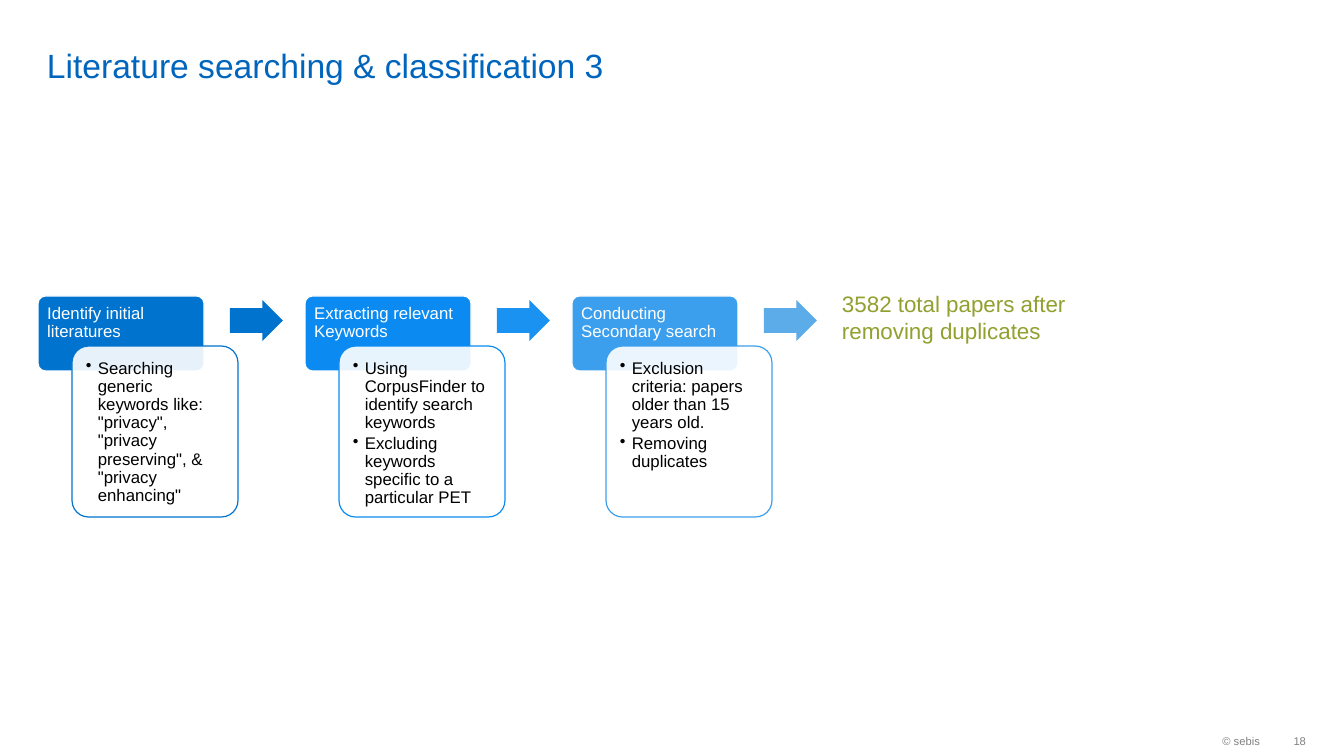
from dataclasses import dataclass

from lxml import etree
from pptx import Presentation
from pptx import util as u
from pptx.dml.color import RGBColor
from pptx.enum import shapes, text
from pptx.oxml import ns


@dataclass(frozen=True)
class Theme:
    font: str = "Arial"
    title: str = "0065BD"
    result: str = "91A02F"
    footer: str = "808080"
    white: str = "FFFFFF"
    black: str = "000000"
    title_size: int = 24
    result_size: int = 16
    body_size: int = 12
    footer_size: int = 8
    line_width: float = 0.85


THEME = Theme()
PX_PER_INCH = 100.8
SLIDE_SIZE = (1344, 756)

# Heading, bullets, box colour, arrow colour
STEPS = [
    ("Identify initial literatures",
     ['Searching generic keywords like: "privacy", "privacy preserving", & "privacy enhancing"'],
     "0073CF", "0073CF"),
    ("Extracting relevant Keywords",
     ["Using CorpusFinder to identify search keywords",
      "Excluding keywords specific to a particular PET"],
     "0B8BF1", "1992F1"),
    ("Conducting Secondary search",
     ["Exclusion criteria: papers older than 15 years old.", "Removing duplicates"],
     "3C9FED", "5CACEA"),
]


def px(length):
    return u.Emu(round(length * 914400 / PX_PER_INCH))


def add_bullet(para, indent):
    props = para._p.get_or_add_pPr()
    props.set("marL", str(px(indent)))
    props.set("indent", str(-px(indent)))
    etree.SubElement(props, ns.qn("a:buChar")).set("char", "•")


def write(shape, lines, size, color, insets, anchor=text.MSO_ANCHOR.TOP,
          align=text.PP_ALIGN.LEFT, spacing=None, after=None, bullet_indent=None):
    frame = shape.text_frame
    frame.word_wrap = True
    frame.vertical_anchor = anchor
    (frame.margin_left, frame.margin_top,
     frame.margin_right, frame.margin_bottom) = map(px, insets)
    frame.text = "\n".join(lines)
    for para in frame.paragraphs:
        if bullet_indent:
            add_bullet(para, bullet_indent)
        para.alignment = align
        if spacing:
            para.line_spacing = spacing
        if after:
            para.space_after = u.Pt(after)
        for span in para.runs:
            span.font.name = THEME.font
            span.font.size = u.Pt(size)
            span.font.color.rgb = RGBColor.from_string(color)


def add_text(page, box, content, size, color, insets, **layout):
    shape = page.shapes.add_textbox(*map(px, box))
    write(shape, [content], size, color, insets, **layout)


def add_block(page, kind, box, fill, adjustments, line=None, opacity=None):
    shape = page.shapes.add_shape(kind, *map(px, box))
    shape.shadow.inherit = False
    for index, value in enumerate(adjustments):
        shape.adjustments[index] = value
    shape.fill.solid()
    shape.fill.fore_color.rgb = RGBColor.from_string(fill)
    if opacity:
        tint = shape._element.spPr.find(ns.qn("a:solidFill"))[0]
        etree.SubElement(tint, ns.qn("a:alpha")).set("val", str(opacity * 1000))
    if line:
        shape.line.color.rgb = RGBColor.from_string(line)
        shape.line.width = u.Pt(THEME.line_width)
    else:
        shape.line.fill.background()
    return shape


def draw_step(page, box, heading, bullets, color, arrow_color):
    left, top, width, height = box
    rounded = shapes.MSO_SHAPE.ROUNDED_RECTANGLE

    # Heading behind, detail card overlapping it
    header = add_block(page, rounded, (left, top, width, 75), color, [0.1], THEME.white)
    write(header, [heading], THEME.body_size, THEME.white, (7, 7, 7, 5), spacing=0.9)
    card = add_block(page, rounded, (left + 34, top + 50, width, height - 50),
                     THEME.white, [0.1], color, opacity=90)
    write(card, bullets, THEME.body_size, THEME.black, (9, 9, 9, 9),
          spacing=0.9, after=1.8, bullet_indent=12)

    # Arrow to the next stage
    add_block(page, shapes.MSO_SHAPE.RIGHT_ARROW, (left + width + 26, top + 4, 53, 41),
              arrow_color, [0.6, 0.5])


def draw_process(page, box):
    left, top, width, height = box
    pitch = width // len(STEPS)
    for index, step in enumerate(STEPS):
        draw_step(page, (left + index * pitch, top, 166, height), *step)


def draw_footer(page, box):
    left, top, width, height = box
    number_width = 36
    split = width - number_width
    layout = dict(anchor=text.MSO_ANCHOR.MIDDLE, align=text.PP_ALIGN.RIGHT)
    add_text(page, (left, top, split, height), "© sebis",
             THEME.footer_size, THEME.footer, (10, 5, 10, 5), **layout)
    add_text(page, (left + split, top, number_width, height), "18",
             THEME.footer_size, THEME.footer, (10, 5, 0, 5), **layout)


def main():
    deck = Presentation()
    deck.slide_width, deck.slide_height = map(px, SLIDE_SIZE)
    page = deck.slides.add_slide(deck.slide_layouts[6])

    # Title
    add_text(page, (37, 5, 1167, 80), "Literature searching & classification 3",
             THEME.title_size, THEME.title, (10, 0, 10, 0), anchor=text.MSO_ANCHOR.BOTTOM)

    # Process and its outcome
    draw_process(page, (38, 296, 801, 221))
    add_text(page, (832, 285, 328, 65), "3582 total papers after removing duplicates",
             THEME.result_size, THEME.result, (10, 5, 10, 5))

    draw_footer(page, (1034, 725, 272, 32))
    deck.save("out.pptx")


if __name__ == "__main__":
    main()
